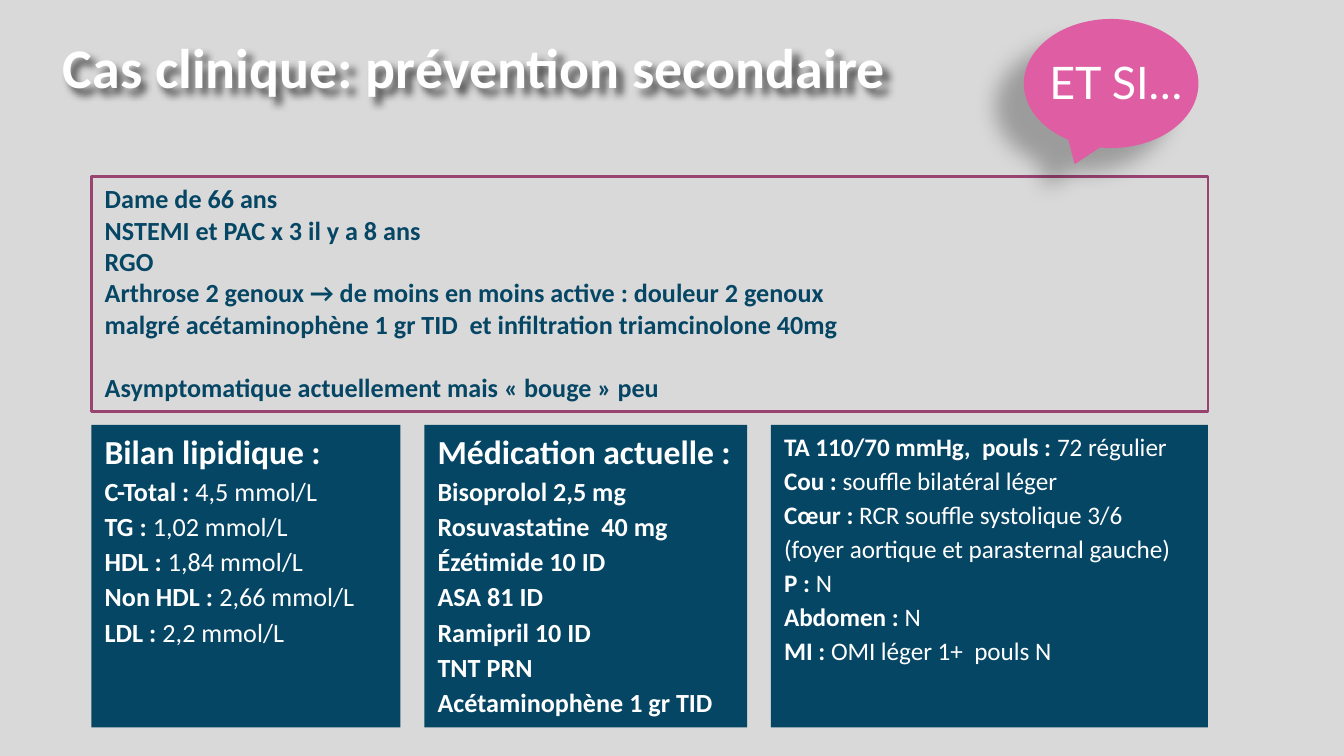
from lxml import etree
from pptx import Presentation
from pptx.dml.color import RGBColor
from pptx.enum import shapes, text
from pptx.oxml import ns
from pptx.util import Cm, Pt

NAVY = RGBColor(0x06, 0x46, 0x65)
PLUM = RGBColor(0x99, 0x43, 0x71)
PINK = RGBColor(0xDF, 0x5E, 0xA3)
GREY = RGBColor(0xD9, 0xD9, 0xD9)
WHITE = RGBColor(0xFF, 0xFF, 0xFF)

TITLE = "Cas clinique: prévention secondaire"
CALLOUT = "ET SI…"
HISTORY = [
    "Dame de 66 ans",
    "NSTEMI et PAC x 3 il y a 8 ans",
    "RGO",
    "Arthrose 2 genoux → de moins en moins active : douleur 2 genoux",
    "malgré acétaminophène 1 gr TID  et infiltration triamcinolone 40mg",
    "Asymptomatique actuellement mais « bouge » peu",
]
# Each panel: width in cm, text size, heading, lines of (bold part, plain part)
PANELS = [
    (5.84, 14, "Bilan lipidique :", [
        ("C-Total : ", "4,5 mmol/L"),
        ("TG : ", "1,02 mmol/L"),
        ("HDL : ", "1,84 mmol/L"),
        ("Non HDL : ", "2,66 mmol/L"),
        ("LDL : ", "2,2 mmol/L"),
    ]),
    (6.1, 14, "Médication actuelle :", [
        ("Bisoprolol 2,5 mg", ""),
        ("Rosuvastatine  40 mg", ""),
        ("Ézétimide 10 ID", ""),
        ("ASA 81 ID", ""),
        ("Ramipril 10 ID", ""),
        ("TNT PRN", ""),
        ("Acétaminophène 1 gr TID", ""),
    ]),
    (8.26, 13.5, "", [
        ("TA 110/70 mmHg,  pouls : ", "72 régulier"),
        ("Cou : ", "souffle bilatéral léger"),
        ("Cœur : ", "RCR souffle systolique 3/6"),
        ("", "(foyer aortique et parasternal gauche)"),
        ("P : ", "N"),
        ("Abdomen : ", "N"),
        ("MI : ", "OMI léger 1+  pouls N"),
    ]),
]
LEFT, GAP = 1.73, 0.45
HISTORY_TOP, HISTORY_HEIGHT = 3.33, 4.45
PANEL_TOP, PANEL_HEIGHT = 8.03, 5.72
TOTAL_WIDTH = sum(panel[0] for panel in PANELS) + GAP * (len(PANELS) - 1)


def style(para, size, color, bold=None, name="Calibri"):
    para.font.size = Pt(size)
    para.font.name = name
    para.font.bold = bold
    para.font.color.rgb = color


def add_shadow(shape, blur, distance, angle, opacity):
    """Add a black outer shadow: points, degrees and percent."""
    effects = shape._element.spPr.find(ns.qn("a:effectLst"))
    if effects is None:
        effects = etree.SubElement(shape._element.spPr, ns.qn("a:effectLst"))
    shadow = etree.SubElement(
        effects, ns.qn("a:outerShdw"), blurRad=str(Pt(blur)), dist=str(Pt(distance)),
        dir=str(angle * 60000), algn="tl", rotWithShape="0")
    color = etree.SubElement(shadow, ns.qn("a:srgbClr"), val="000000")
    etree.SubElement(color, ns.qn("a:alpha"), val=str(opacity * 1000))


def add_box(page, kind, left, top, width, height, fill=None, line=None):
    box = page.shapes.add_shape(kind, Cm(left), Cm(top), Cm(width), Cm(height))
    box.shadow.inherit = False
    if fill is None:
        box.fill.background()
    else:
        box.fill.solid()
        box.fill.fore_color.rgb = fill
    if line is None:
        box.line.fill.background()
    else:
        box.line.color.rgb = line
        box.line.width = Pt(1.5)
    box.text_frame.word_wrap = True
    box.text_frame.vertical_anchor = text.MSO_ANCHOR.TOP
    return box


def next_paragraph(frame, index):
    para = frame.add_paragraph() if index else frame.paragraphs[0]
    para.alignment = text.PP_ALIGN.LEFT
    return para


def add_title(page):
    title = page.shapes.title
    title.left, title.top, title.width, title.height = Cm(1.19), Cm(0.56), Cm(23.72), Cm(1.63)
    frame = title.text_frame
    frame.margin_left = 0
    frame.vertical_anchor = text.MSO_ANCHOR.MIDDLE
    frame.text = TITLE
    para = frame.paragraphs[0]
    para.alignment = text.PP_ALIGN.LEFT
    para.line_spacing = 0.8
    style(para, 30, WHITE, True)
    add_shadow(title, 4, 4, 45, 65)


def add_history(page):
    box = add_box(page, shapes.MSO_SHAPE.RECTANGLE, LEFT, HISTORY_TOP,
                  TOTAL_WIDTH, HISTORY_HEIGHT, line=PLUM)
    for index, line in enumerate(HISTORY):
        para = next_paragraph(box.text_frame, index)
        para.add_run().text = line
        style(para, 14, NAVY, True)
    para.space_before = Pt(17)


def add_panels(page):
    left = LEFT
    for width, size, heading, lines in PANELS:
        box = add_box(page, shapes.MSO_SHAPE.RECTANGLE, left, PANEL_TOP,
                      width, PANEL_HEIGHT, fill=NAVY)
        rows = [(18, heading, "")] if heading else []
        rows += [(size, label, value) for label, value in lines]
        for index, (row_size, label, value) in enumerate(rows):
            para = next_paragraph(box.text_frame, index)
            if index:
                para.space_before = Pt(2)
            for words, bold in ((label, True), (value, False)):
                if words:
                    span = para.add_run()
                    span.text = words
                    span.font.bold = bold
            style(para, row_size, WHITE)
        left += width + GAP


def add_callout(page):
    bubble = add_box(page, shapes.MSO_SHAPE.OVAL_CALLOUT, 19.35, 0.36, 3.3, 2.44, fill=PINK)
    add_shadow(bubble, 11.8, 19.7, 141, 28)
    label = page.shapes.add_textbox(Cm(19.35), Cm(0.91), Cm(3.48), Cm(1.27))
    label.text_frame.word_wrap = True
    label.text_frame.text = CALLOUT
    para = label.text_frame.paragraphs[0]
    para.alignment = text.PP_ALIGN.CENTER
    style(para, 24, WHITE, name="Lato")


def main():
    deck = Presentation()
    deck.slide_width, deck.slide_height = Cm(25.4), Cm(14.29)
    page = deck.slides.add_slide(deck.slide_layouts[5])
    page.background.fill.solid()
    page.background.fill.fore_color.rgb = GREY
    add_title(page)
    add_history(page)
    add_panels(page)
    add_callout(page)
    deck.save("out.pptx")


if __name__ == "__main__":
    main()
